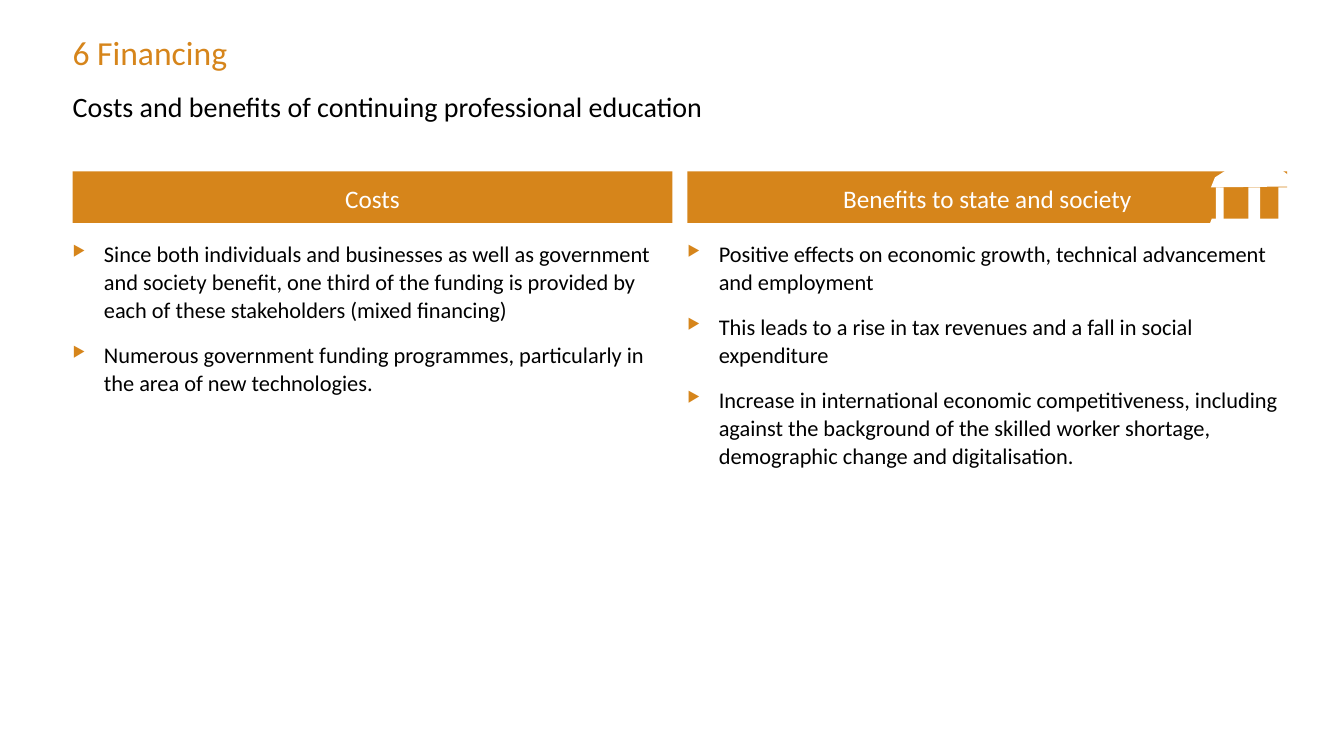
from lxml import etree
from pptx import Presentation
from pptx import util as u
from pptx.dml import color
from pptx.enum import shapes, text
from pptx.oxml import ns

HUES = {"gold": "D6851B", "white": "FFFFFF", "black": "000000"}
LEFT, STEP, WIDE = 1.83, 15.49, 15.11
COLUMNS = [
    ("Costs", 10.31, [
        "Since both individuals and businesses as well as government and society benefit, "
        "one third of the funding is provided by each of these stakeholders (mixed financing)",
        "Numerous government funding programmes, particularly in the area of new technologies.",
    ]),
    ("Benefits to state and society", 8.86, [
        "Positive effects on economic growth, technical advancement and employment",
        "This leads to a rise in tax revenues and a fall in social expenditure",
        "Increase in international economic competitiveness, including against the background "
        "of the skilled worker shortage, demographic change and digitalisation.",
    ]),
]
ROOF = [(31.57, 3.86), (32.13, 4.17), (32.54, 4.47), (32.54, 4.65),
        (32.56, 4.7), (30.68, 4.72), (30.51, 4.72), (30.61, 4.47)]
BASE = [(32.59, 5.51), (32.59, 5.69), (30.45, 5.72), (30.53, 5.51)]
PILLARS = [(30.63, 0.2), (31.45, 0.3), (32.21, 0.3)]


class Deck:
    font = "Calibri"

    def __init__(self, slide):
        self.slide = slide

    def hue(self, name):
        return color.RGBColor.from_string(HUES[name])

    def paint(self, shape, name):
        shape.shadow.inherit = False
        shape.fill.solid()
        shape.fill.fore_color.rgb = self.hue(name)
        shape.line.fill.background()

    def frame(self, shape, inset=(0, 0, 0, 0)):
        frame = shape.text_frame
        frame.word_wrap = True
        (frame.margin_left, frame.margin_top,
         frame.margin_right, frame.margin_bottom) = [u.Cm(n) for n in inset]
        return frame

    def run(self, para, words, size, hue):
        run = para.add_run()
        run.text = words
        run.font.name = self.font
        run.font.size = u.Pt(size)
        run.font.color.rgb = self.hue(hue)

    def box(self, x, y, w, h):
        return self.frame(self.slide.shapes.add_textbox(*map(u.Cm, (x, y, w, h))))

    def label(self, place, words, size, hue):
        self.run(self.box(*place).paragraphs[0], words, size, hue)

    def bullet(self, para):
        props = para._p.get_or_add_pPr()
        props.set("marL", str(u.Cm(0.79)))
        props.set("indent", str(-u.Cm(0.79)))
        tint = etree.SubElement(props, ns.qn("a:buClr"))
        etree.SubElement(tint, ns.qn("a:srgbClr"), val=HUES["gold"])
        etree.SubElement(props, ns.qn("a:buSzPct"), val="65000")
        etree.SubElement(props, ns.qn("a:buChar"), char="▶")

    def points(self, place, items):
        frame = self.box(*place)
        for i, words in enumerate(items):
            para = frame.add_paragraph() if i else frame.paragraphs[0]
            self.bullet(para)
            para.line_spacing = u.Pt(20)
            para.space_before = u.Pt(6 if i else 0)
            para.space_after = u.Pt(6)
            self.run(para, words, 16, "black")

    def rect(self, x, y, w, h, hue, home=None):
        home = home or self.slide.shapes
        shape = home.add_shape(shapes.MSO_SHAPE.RECTANGLE, *map(u.Cm, (x, y, w, h)))
        self.paint(shape, hue)
        return shape

    def header(self, place, words):
        frame = self.frame(self.rect(*place, "gold"), (0.1, 0.2, 0.1, 0))
        frame.vertical_anchor = text.MSO_ANCHOR.MIDDLE
        para = frame.paragraphs[0]
        para.alignment = text.PP_ALIGN.CENTER
        para.line_spacing = u.Pt(17)
        self.run(para, words, 18, "white")

    def outline(self, home, dots):
        first, *rest = [(u.Cm(x), u.Cm(y)) for x, y in dots]
        pen = home.build_freeform(*first)
        pen.add_line_segments(rest, close=True)
        self.paint(pen.convert_to_shape(), "white")

    def temple(self):
        home = self.slide.shapes.add_group_shape().shapes
        self.outline(home, ROOF)
        for x, w in PILLARS:
            self.rect(x, 4.72, w, 0.86, "white", home)
        self.outline(home, BASE)


def main():
    prs = Presentation()
    prs.slide_width, prs.slide_height = u.Cm(33.86), u.Cm(19.05)
    deck = Deck(prs.slides.add_slide(prs.slide_layouts[6]))
    deck.label((LEFT, 2.26, 30.71, 1.24),
               "Costs and benefits of continuing professional education", 20, "black")
    deck.label((LEFT, 0.81, 24.99, 1.24), "6 Financing", 24, "gold")
    for i, (head, high, items) in enumerate(COLUMNS):
        x = LEFT + i * STEP
        deck.points((x, 6.02, WIDE, high), items)
        deck.header((x, 4.32, WIDE, 1.3), head)
    deck.temple()
    prs.save("out.pptx")


if __name__ == "__main__":
    main()
